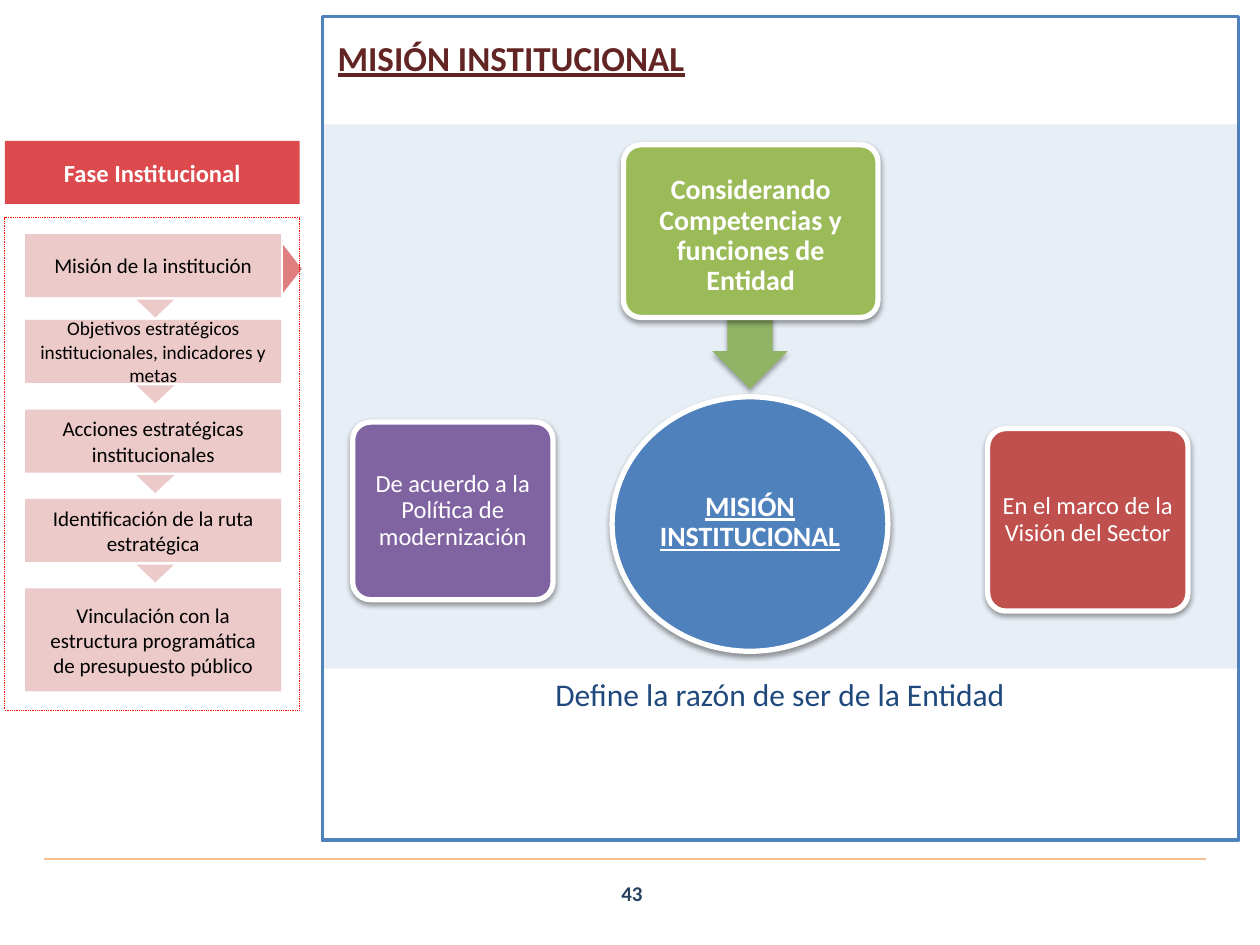
from lxml import etree
from pptx import Presentation
from pptx.dml.color import RGBColor
from pptx.enum.dml import MSO_LINE
from pptx.enum.shapes import MSO_CONNECTOR, MSO_SHAPE
from pptx.enum.text import MSO_ANCHOR, MSO_AUTO_SIZE, PP_ALIGN
from pptx.oxml.ns import qn
from pptx.util import Cm, Pt

RECTANGLE = MSO_SHAPE.RECTANGLE
ROUNDED = MSO_SHAPE.ROUNDED_RECTANGLE
OVAL = MSO_SHAPE.OVAL
TRIANGLE = MSO_SHAPE.ISOSCELES_TRIANGLE
DOWN_ARROW = MSO_SHAPE.DOWN_ARROW
STRAIGHT = MSO_CONNECTOR.STRAIGHT
DOTTED = MSO_LINE.ROUND_DOT
LEFT, CENTER = PP_ALIGN.LEFT, PP_ALIGN.CENTER
TOP, MIDDLE = MSO_ANCHOR.TOP, MSO_ANCHOR.MIDDLE
NO_FIT = MSO_AUTO_SIZE.NONE
color = RGBColor.from_string

deck = Presentation()
deck.slide_width, deck.slide_height = Cm(25.4), Cm(19.05)
page = deck.slides.add_slide(deck.slide_layouts[5])


def add_box(kind, place, fill=None, opacity=100, line=None, width=1, shadow=False):
    box = page.shapes.add_shape(kind, *map(Cm, place))
    box.shadow.inherit = False
    if fill:
        box.fill.solid()
        box.fill.fore_color.rgb = color(fill)
        if opacity < 100:
            tint = box.fill._xPr.find(qn("a:solidFill"))[0]
            etree.SubElement(tint, qn("a:alpha"), val=str(opacity * 1000))
    else:
        box.fill.background()
    if line:
        box.line.color.rgb = color(line)
        box.line.width = Pt(width)
    else:
        box.line.fill.background()
    if shadow:
        effects = box._element.spPr.find(qn("a:effectLst"))
        outer = etree.SubElement(effects, qn("a:outerShdw"), blurRad="40000",
                                 dist="20000", dir="5400000", rotWithShape="0")
        black = etree.SubElement(outer, qn("a:srgbClr"), val="000000")
        etree.SubElement(black, qn("a:alpha"), val="38000")
    return box


def write(box, text, size, ink, bold=False, underline=False, align=CENTER, anchor=MIDDLE):
    frame = box.text_frame
    frame.word_wrap = True
    frame.auto_size = NO_FIT
    frame.vertical_anchor = anchor
    frame.text = text
    para = frame.paragraphs[0]
    para.alignment = align
    font = para.font
    font.name, font.size, font.color.rgb = "Calibri", Pt(size), color(ink)
    font.bold, font.underline = bold, underline


arrow = add_box(DOWN_ARROW, (14.36, 3.9, 1.52, 3.94), "9BBB59", shadow=True)
arrow.adjustments[0] = 0.6
arrow.adjustments[1] = 0.5
add_box(RECTANGLE, (6.5, 2.51, 18.47, 10.97), "4F81BD", opacity=13)

phase = add_box(RECTANGLE, (0.1, 2.84, 5.94, 1.27), "DC4A4D")
write(phase, "Fase Institucional", 14, "FFFFFF", bold=True)
phase_frame = add_box(RECTANGLE, (0.1, 4.39, 5.94, 9.93), line="FF0000", width=0.5)
phase_frame.line.dash_style = DOTTED

steps = [
    (4.72, 1.27, 12, "Misión de la institución"),
    (6.45, 1.27, 11, "Objetivos estratégicos institucionales, indicadores y metas"),
    (8.26, 1.27, 12, "Acciones estratégicas institucionales"),
    (10.06, 1.27, 12, "Identificación de la ruta estratégica"),
    (11.86, 2.08, 12, "Vinculación con la estructura programática de presupuesto público"),
]
for top, height, size, text in steps:
    step = add_box(RECTANGLE, (0.51, top, 5.16, height), "D99694", opacity=50)
    write(step, text, size, "000000")
for top, height, size, text in steps[:-1]:
    pointer = add_box(TRIANGLE, (2.75, top + height + 0.05, 0.76, 0.36), "D99694", opacity=50)
    pointer.rotation = 180

add_box(RECTANGLE, (6.5, 0.33, 18.47, 16.61), line="4F81BD", width=2)

rule = page.shapes.add_connector(STRAIGHT, Cm(0.89), Cm(17.32), Cm(24.31), Cm(17.32))
rule.line.color.rgb = color("FAC090")
rule.line.width = Pt(1.25)
etree.SubElement(rule._element.spPr, qn("a:effectLst"))

number = page.shapes.add_textbox(Cm(9.78), Cm(17.5), Cm(5.92), Cm(1.02))
write(number, "43", 12, "254061", bold=True)

marker = add_box(TRIANGLE, (5.41, 5.23, 0.97, 0.38), "C00000", opacity=50)
marker.rotation = 90

title = page.shapes.title
title.left, title.top, title.width, title.height = Cm(6.55), Cm(0.61), Cm(12.7), Cm(1.12)
write(title, "MISIÓN INSTITUCIONAL", 20, "632523", bold=True, underline=True,
      align=LEFT, anchor=TOP)

caption = page.shapes.add_textbox(Cm(6.53), Cm(13.49), Cm(18.39), Cm(1.02))
write(caption, "Define la razón de ser de la Entidad", 18, "1F497D", anchor=TOP)

cards = [
    (OVAL, (12.34, 8, 5.56, 5.13), "4F81BD", 16, True, True, 0.05, "MISIÓN INSTITUCIONAL"),
    (ROUNDED, (12.57, 2.92, 5.13, 3.48), "9BBB59", 16, True, False, 0.3,
     "Considerando Competencias y funciones de Entidad"),
    (ROUNDED, (19.91, 8.64, 4.04, 3.68), "C0504D", 14, False, False, 0.1,
     "En el marco de la Visión del Sector"),
    (ROUNDED, (7.11, 8.51, 4.04, 3.58), "8064A2", 14, False, False, 0.1,
     "De acuerdo a la Política de modernización"),
]
for kind, place, fill, size, bold, underline, top_inset, text in cards:
    card = add_box(kind, place, fill, line="FFFFFF", width=3, shadow=True)
    if kind == ROUNDED:
        card.adjustments[0] = 0.1
    write(card, text, size, "FFFFFF", bold, underline)
    frame = card.text_frame
    frame.margin_left = frame.margin_right = frame.margin_bottom = Cm(0.1)
    frame.margin_top = Cm(top_inset)
    frame.paragraphs[0].line_spacing = 0.9

deck.save("out.pptx")
